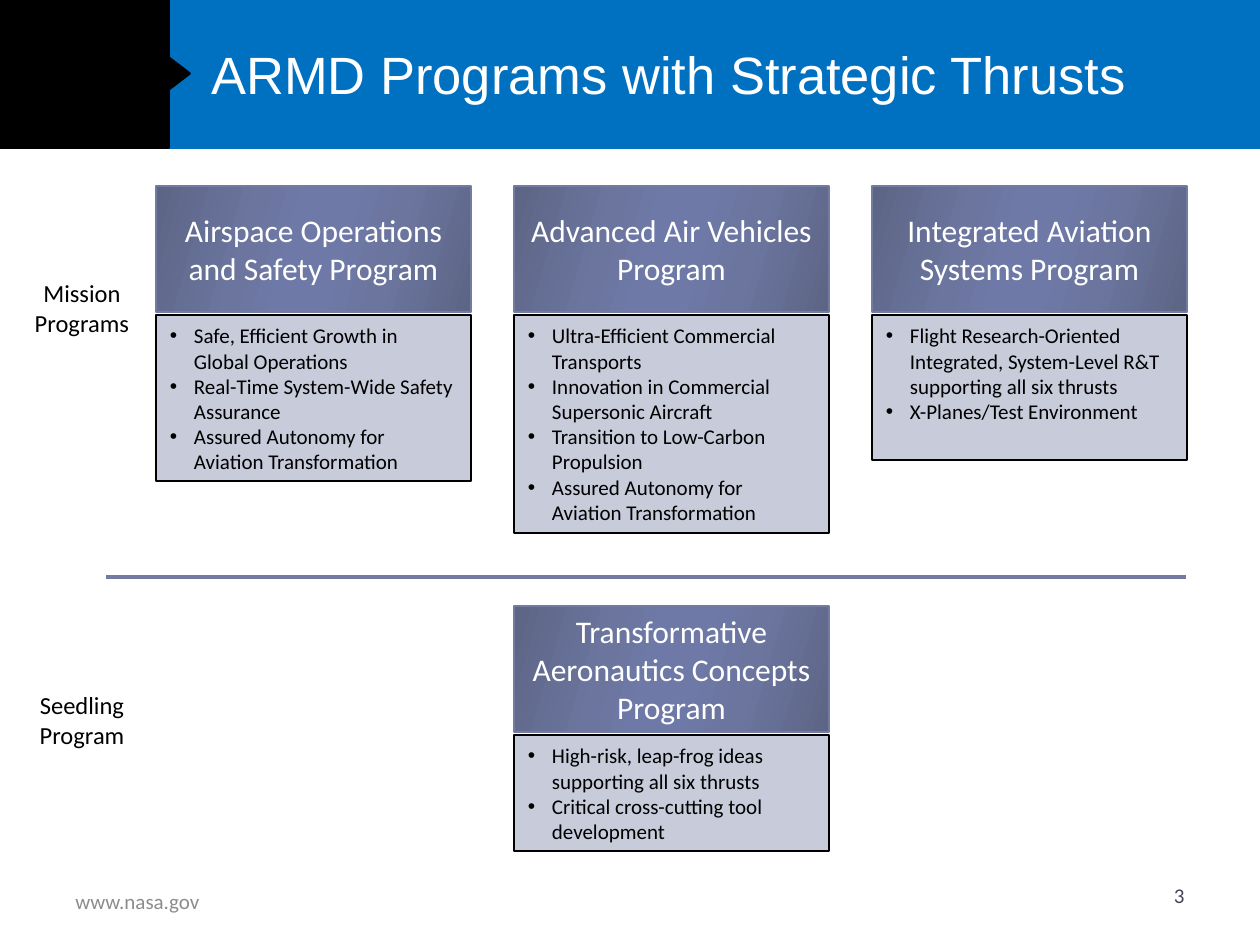
from lxml import etree
from pptx import Presentation
from pptx.dml.color import RGBColor
from pptx.enum.shapes import MSO_CONNECTOR, MSO_SHAPE
from pptx.enum.text import MSO_ANCHOR, PP_ALIGN
from pptx.oxml import parse_xml
from pptx.oxml.ns import nsdecls, qn
from pptx.util import Emu, Pt

RECT, TRIANGLE = MSO_SHAPE.RECTANGLE, MSO_SHAPE.ISOSCELES_TRIANGLE
TOP, MIDDLE = MSO_ANCHOR.TOP, MSO_ANCHOR.MIDDLE
LEFT, CENTER, RIGHT = PP_ALIGN.LEFT, PP_ALIGN.CENTER, PP_ALIGN.RIGHT

COLORS = {
    "banner": "0070C0", "black": "000000", "white": "FFFFFF",
    "rule": "727CA3", "list": "C7CBDA", "footer": "8C8C8C", "number": "464653",
}
HEADER_STOPS = [(0, "5D6585"), (30, "6B759E"), (45, "6E79A7"),
                (55, "6E79A7"), (73, "6B759E"), (100, "5D6585")]
HEADER_ANGLE = 16

# Banner parts: shape, place, rotation, color
BANNER = [
    (RECT, (0, 0, 1260, 148), 0, "banner"),
    (RECT, (0, 0, 169, 148), 0, "black"),
    (TRIANGLE, (163, 63, 32, 21), 90, "black"),
]

# Text: words, place, size, font, color, alignment, anchor
TEXTS = [
    ("ARMD Programs with Strategic Thrusts", (199, 0, 1061, 148),
     30, "Arial", "white", LEFT, MIDDLE),
    ("Mission Programs", (18, 272, 128, 72), 14, "Calibri", "black", CENTER, TOP),
    ("Seedling Program", (10, 684, 144, 72), 14, "Calibri", "black", CENTER, TOP),
    ("www.nasa.gov", (63, 876, 399, 50), 12, "Calibri", "footer", LEFT, MIDDLE),
    ("3", (924, 876, 273, 50), 12, "Calibri", "number", RIGHT, TOP),
]

# Programs: column, row, name, list height, list items
PROGRAMS = [
    (0, 0, "Airspace Operations and Safety Program", 166, [
        "Safe, Efficient Growth in Global Operations",
        "Real-Time System-Wide Safety Assurance",
        "Assured Autonomy for Aviation Transformation"]),
    (1, 0, "Advanced Air Vehicles Program", 218, [
        "Ultra-Efficient Commercial Transports",
        "Innovation in Commercial Supersonic Aircraft",
        "Transition to Low-Carbon Propulsion",
        "Assured Autonomy for Aviation Transformation"]),
    (2, 0, "Integrated Aviation Systems Program", 145, [
        "Flight Research-Oriented Integrated, System-Level R&T supporting all six thrusts",
        "X-Planes/Test Environment"]),
    (1, 1, "Transformative Aeronautics Concepts Program", 116, [
        "High-risk, leap-frog ideas supporting all six thrusts",
        "Critical cross-cutting tool development"]),
]
GRID_LEFT, GRID_TOP, COLUMN_STEP, ROW_STEP = 156, 186, 358, 420
CARD_WIDTH, HEADER_HEIGHT, LIST_OFFSET = 315, 126, 129
LIST_INSETS, BULLET_INDENT = (14, 8, 14, 8), 24
DIVIDER = (106, 577, 1186, 577)


def px(value):
    return Emu(round(value * 914400 / 126))


def rgb(name):
    return RGBColor.from_string(COLORS[name])


def add_box(page, kind, place, fill, line, line_width):
    box = page.shapes.add_shape(kind, *map(px, place))
    box.shadow.inherit = False
    if fill:
        box.fill.solid()
        box.fill.fore_color.rgb = rgb(fill)
    box.line.color.rgb = rgb(line)
    box.line.width = Pt(line_width)
    return box


def write(box, lines, size, font, color, align, anchor, bullets=False):
    frame = box.text_frame
    frame.word_wrap = True
    frame.vertical_anchor = anchor
    for index, line in enumerate(lines):
        para = frame.paragraphs[0] if index == 0 else frame.add_paragraph()
        para.alignment = align
        if bullets:
            props = para._p.get_or_add_pPr()
            props.set("marL", str(px(BULLET_INDENT)))
            props.set("indent", str(-px(BULLET_INDENT)))
            etree.SubElement(props, qn("a:buFont")).set("typeface", "Arial")
            etree.SubElement(props, qn("a:buChar")).set("char", "•")
        span = para.add_run()
        span.text = line
        span.font.size = Pt(size)
        span.font.name = font
        span.font.color.rgb = rgb(color)


def fill_gradient(box):
    stops = "".join(f'<a:gs pos="{pos * 1000}"><a:srgbClr val="{color}"/></a:gs>'
                    for pos, color in HEADER_STOPS)
    gradient = parse_xml(
        f'<a:gradFill {nsdecls("a")} rotWithShape="1"><a:gsLst>{stops}</a:gsLst>'
        f'<a:lin ang="{HEADER_ANGLE * 60000}" scaled="0"/></a:gradFill>')
    box._element.spPr.find(qn("a:prstGeom")).addnext(gradient)


def add_program(page, column, row, name, list_height, items):
    left = GRID_LEFT + column * COLUMN_STEP
    top = GRID_TOP + row * ROW_STEP
    header = add_box(page, RECT, (left, top, CARD_WIDTH, HEADER_HEIGHT),
                     None, "rule", 0.75)
    fill_gradient(header)
    write(header, [name], 18, "Calibri", "white", CENTER, MIDDLE)

    listing = add_box(page, RECT, (left, top + LIST_OFFSET, CARD_WIDTH, list_height),
                      "list", "black", 0.75)
    frame = listing.text_frame
    (frame.margin_left, frame.margin_top,
     frame.margin_right, frame.margin_bottom) = map(px, LIST_INSETS)
    write(listing, items, 12, "Calibri", "black", LEFT, TOP, bullets=True)


def main():
    deck = Presentation()
    deck.slide_width, deck.slide_height = px(1260), px(945)
    page = deck.slides.add_slide(deck.slide_layouts[6])

    # Banner
    for kind, place, rotation, color in BANNER:
        add_box(page, kind, place, color, color, 1.5).rotation = rotation

    # Title, row labels and footer
    for words, place, *style in TEXTS:
        write(page.shapes.add_textbox(*map(px, place)), [words], *style)

    # Program cards
    for program in PROGRAMS:
        add_program(page, *program)

    # Divider between the rows
    divider = page.shapes.add_connector(MSO_CONNECTOR.STRAIGHT, *map(px, DIVIDER))
    divider.line.color.rgb = rgb("rule")
    divider.line.width = Pt(2)
    etree.SubElement(divider._element.spPr, qn("a:effectLst"))

    deck.save("out.pptx")


if __name__ == "__main__":
    main()
